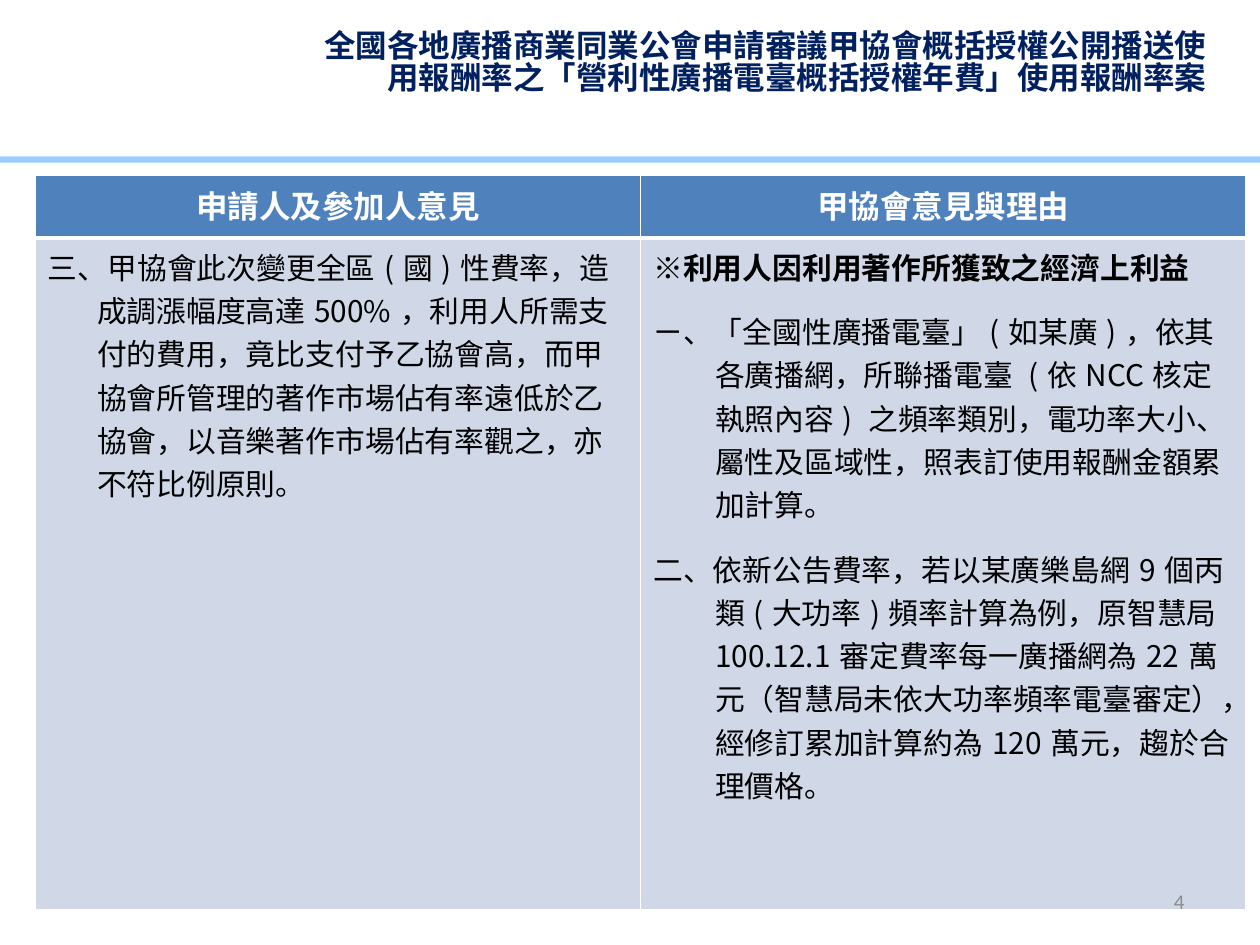
import pptx
import pptx.util
import pptx.dml.color
import pptx.enum.shapes
import pptx.enum.text
import pptx.oxml
import pptx.oxml.ns
from lxml import etree

Inches, Pt = pptx.util.Inches, pptx.util.Pt
ALIGN = pptx.enum.text.PP_ALIGN
ANCHOR = pptx.enum.text.MSO_ANCHOR

COLORS = {"rule": "99CCFF", "title": "002060", "header": "4F81BD", "body": "D0D8E8",
          "white": "FFFFFF", "black": "000000", "number": "8C8C8C"}
TITLE_FONT, TABLE_FONT, NUMBER_FONT = "Noto Sans CJK TC", "Noto Sans CJK SC", "Calibri"

TITLE = ("全國各地廣播商業同業公會申請審議甲協會概括授權公開播送使用報酬率之"
         "「營利性廣播電臺概括授權年費」使用報酬率案")
PAGE_NUMBER = "4"
# Each column: heading, hanging indent in inches, paragraphs as (text, bold)
COLUMNS = [
    ("申請人及參加人意見", 0.39, [
        ("三、甲協會此次變更全區(國)性費率，造成調漲幅度高達500%，利用人所需支付的費用，"
         "竟比支付予乙協會高，而甲協會所管理的著作市場佔有率遠低於乙協會，"
         "以音樂著作市場佔有率觀之，亦不符比例原則。", False),
    ]),
    ("甲協會意見與理由", 0.49, [
        ("※利用人因利用著作所獲致之經濟上利益", True),
        ("ㄧ、「全國性廣播電臺」(如某廣)，依其各廣播網，所聯播電臺 (依NCC核定執照內容) "
         "之頻率類別，電功率大小、屬性及區域性，照表訂使用報酬金額累加計算。", False),
        ("二、依新公告費率，若以某廣樂島網9個丙類(大功率)頻率計算為例，"
         "原智慧局100.12.1審定費率每一廣播網為22萬元（智慧局未依大功率頻率電臺審定），"
         "經修訂累加計算約為120萬元，趨於合理價格。", False),
    ]),
]
ROW_HEIGHTS = [0.5, 5.33]
TABLE_LEFT, TABLE_TOP, TABLE_WIDTH = 0.28, 1.39, 9.61


def rgb(name):
    return pptx.dml.color.RGBColor.from_string(COLORS[name])


def add_run(p, text, size, font, color, bold=False):
    r = p.add_run()
    r.text = text
    r.font.size, r.font.name, r.font.bold = Pt(size), font, bold
    r.font.color.rgb = rgb(color)
    ea = etree.SubElement(r.font._element, pptx.oxml.ns.qn("a:ea"))
    ea.set("typeface", font)


def add_text(slide, box, anchor):
    """Add a wrapping text box and return its right-aligned first paragraph."""
    tf = slide.shapes.add_textbox(*map(Inches, box)).text_frame
    tf.word_wrap = True
    tf.vertical_anchor = anchor
    p = tf.paragraphs[0]
    p.alignment = ALIGN.RIGHT
    return p


def style_cell(cell, fill, bottom_width):
    """Give the cell white borders and a solid fill."""
    tcPr = cell._tc.get_or_add_tcPr()
    for side, width in (("L", 1), ("R", 1), ("T", 1), ("B", bottom_width)):
        tcPr.append(pptx.oxml.parse_xml(
            f'<a:ln{side} {pptx.oxml.ns.nsdecls("a")} w="{Pt(width)}"><a:solidFill>'
            f'<a:srgbClr val="{COLORS["white"]}"/></a:solidFill></a:ln{side}>'))
    cell.fill.solid()
    cell.fill.fore_color.rgb = rgb(fill)


def add_opinion_table(slide):
    frame = slide.shapes.add_table(
        len(ROW_HEIGHTS), len(COLUMNS), Inches(TABLE_LEFT), Inches(TABLE_TOP),
        Inches(TABLE_WIDTH), Inches(sum(ROW_HEIGHTS)))
    table = frame.table
    for row, height in zip(table.rows, ROW_HEIGHTS):
        row.height = Inches(height)
    for i, (heading, indent, paragraphs) in enumerate(COLUMNS):
        head, body = table.cell(0, i), table.cell(1, i)
        style_cell(head, "header", 3)
        style_cell(body, "body", 1)
        p = head.text_frame.paragraphs[0]
        p.alignment = ALIGN.CENTER
        add_run(p, heading, 18, TABLE_FONT, "white", True)
        tf = body.text_frame
        for j, (text, bold) in enumerate(paragraphs):
            p = tf.add_paragraph() if j else tf.paragraphs[0]
            if j:
                p.space_before = Pt(6)
            p.space_after = Pt(6)
            pPr = p._p.get_or_add_pPr()
            pPr.set("marL", str(Inches(indent)))
            pPr.set("indent", str(-Inches(indent)))
            add_run(p, text, 17, TABLE_FONT, "black", bold)


def main():
    prs = pptx.Presentation()
    prs.slide_width, prs.slide_height = Inches(10), Inches(7.5)
    s = prs.slides.add_slide(prs.slide_layouts[6])

    rule = s.shapes.add_shape(pptx.enum.shapes.MSO_SHAPE.RECTANGLE,
                              *map(Inches, (-0.04, 1.24, 10.06, 0.05)))
    rule.shadow.inherit = False
    rule.fill.solid()
    rule.fill.fore_color.rgb = rgb("rule")
    rule.line.fill.background()

    p = add_text(s, (2.24, 0.21, 7.43, 1.02), ANCHOR.TOP)
    p.line_spacing = 0.83
    add_run(p, TITLE, 18, TITLE_FONT, "title", True)

    add_opinion_table(s)

    p = add_text(s, (7.17, 6.95, 2.33, 0.4), ANCHOR.MIDDLE)
    add_run(p, PAGE_NUMBER, 12, NUMBER_FONT, "number")
    prs.save("out.pptx")


if __name__ == "__main__":
    main()
